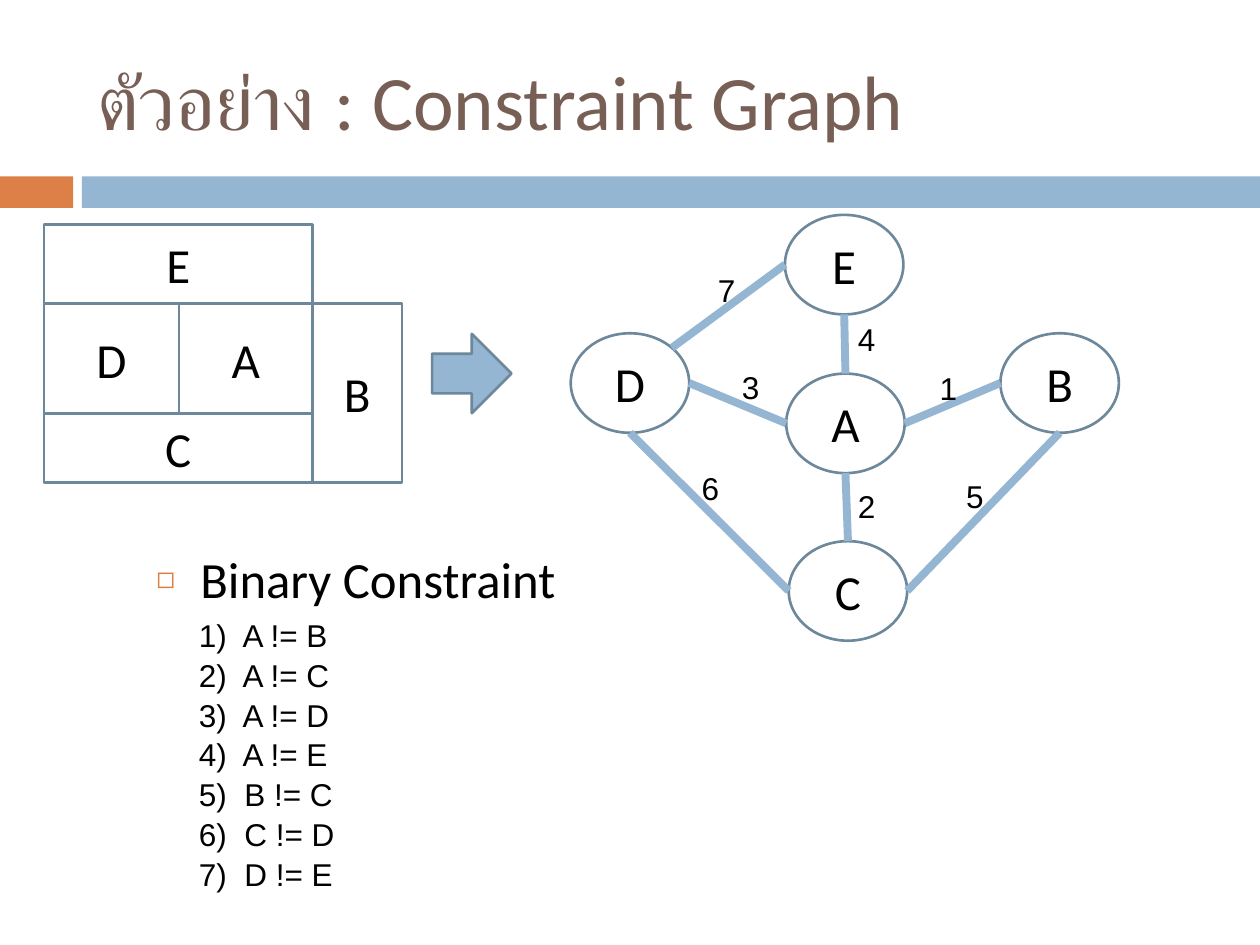
from math import sqrt

from lxml.etree import SubElement
from pptx import Presentation
from pptx.dml.color import RGBColor
from pptx.enum.shapes import MSO_CONNECTOR as LINK, MSO_SHAPE as SHAPE
from pptx.enum.text import MSO_ANCHOR as ANCHOR, MSO_AUTO_SIZE as FIT, PP_ALIGN as ALIGN
from pptx.oxml.ns import qn
from pptx.util import Inches, Pt

BLACK = RGBColor(0x00, 0x00, 0x00)
WHITE = RGBColor(0xFF, 0xFF, 0xFF)
BROWN = RGBColor(0x77, 0x5F, 0x55)
ORANGE = RGBColor(0xDD, 0x80, 0x47)
BLUE = RGBColor(0x94, 0xB6, 0xD2)
SLATE = RGBColor(0x6D, 0x87, 0x9B)

# Map grid lines, and each region as first column, first row, end column, end row
COLS = (0.35, 1.42, 2.48, 3.19)
ROWS = (1.78, 2.41, 3.28, 3.83)
MAP = {"E": (0, 0, 2, 1), "D": (0, 1, 1, 2), "C": (0, 2, 2, 3),
       "B": (2, 1, 3, 3), "A": (1, 1, 2, 2)}

# Graph nodes by centre, with a common size
NODE_W, NODE_H = 0.94, 0.79
NODES = {"A": (6.71, 3.36), "C": (6.73, 4.69), "B": (8.41, 3.04),
         "D": (5.0, 3.04), "E": (6.7, 2.1)}

# Points on an ellipse, in radii from its centre
TOP, BOTTOM, LEFT, RIGHT = (0, -1), (0, 1), (-1, 0), (1, 0)
CORNER = (1 / sqrt(2), -1 / sqrt(2))

# Constraints in order: two nodes, their joining points, place of the number
EDGES = (("A", "B", RIGHT, LEFT, (7.36, 2.88)),
         ("A", "C", BOTTOM, TOP, (6.71, 3.82)),
         ("A", "D", LEFT, RIGHT, (5.79, 2.87)),
         ("A", "E", TOP, BOTTOM, (6.71, 2.49)),
         ("B", "C", BOTTOM, RIGHT, (7.57, 3.74)),
         ("C", "D", LEFT, BOTTOM, (5.47, 3.67)),
         ("D", "E", CORNER, LEFT, (5.6, 2.1)))
LIST_TOP, LIST_STEP = 4.84, 0.316


def place(item, x, y, w, h):
    item.left, item.top, item.width, item.height = map(Inches, (x, y, w, h))


def write(para, text, size, font="Calibri", color=BLACK):
    run = para.add_run()
    run.text = text
    run.font.size, run.font.name = Pt(size), font
    run.font.color.rgb = color


def add_form(slide, kind, box, fill=None, line=None, text=None):
    form = slide.shapes.add_shape(kind, *map(Inches, box))
    form.shadow.inherit = False
    if fill is None:
        form.fill.background()
    else:
        form.fill.solid()
        form.fill.fore_color.rgb = fill
    if line is None:
        form.line.fill.background()
    else:
        form.line.color.rgb, form.line.width = line, Pt(1.5)
    if text:
        frame = form.text_frame
        frame.vertical_anchor = ANCHOR.MIDDLE
        frame.paragraphs[0].alignment = ALIGN.CENTER
        write(frame.paragraphs[0], text, 28)


def add_note(slide, x, y, w, text, wrap):
    frame = slide.shapes.add_textbox(*map(Inches, (x, y, w, 0.4))).text_frame
    frame.word_wrap, frame.auto_size = wrap, FIT.SHAPE_TO_FIT_TEXT
    write(frame.paragraphs[0], text, 18, "Arial")


def port(name, side):
    x, y = NODES[name]
    return Inches(x + side[0] * NODE_W / 2), Inches(y + side[1] * NODE_H / 2)


def add_edge(slide, start, end):
    edge = slide.shapes.add_connector(LINK.STRAIGHT, *start, *end)
    edge.line.color.rgb, edge.line.width = BLUE, Pt(4.5)
    SubElement(edge._element.spPr, qn("a:effectLst"))


def add_bullet(para):
    para.space_before = Pt(7)
    props = para._p.get_or_add_pPr()
    props.set("marL", str(Inches(0.35)))
    props.set("indent", str(-Inches(0.35)))
    tint = SubElement(props, qn("a:buClr"))
    SubElement(tint, qn("a:srgbClr"), val=str(ORANGE))
    SubElement(props, qn("a:buSzPct"), val="60000")
    SubElement(props, qn("a:buChar"), char="◻")


def add_heads(slide):
    title, body = slide.shapes.title, slide.placeholders[1]
    place(title, 0.67, 0.25, 8.92, 1.08)
    place(body, 1.14, 4.3, 3.48, 0.63)
    for item in (title, body):
        item.text_frame.auto_size = FIT.NONE
    title.text_frame.vertical_anchor = ANCHOR.MIDDLE
    para = title.text_frame.paragraphs[0]
    para.alignment = ALIGN.LEFT
    write(para, "ตัวอย่าง : Constraint Graph", 44, color=BROWN)
    para = body.text_frame.paragraphs[0]
    add_bullet(para)
    write(para, "Binary Constraint", 29)


def add_map(slide):
    for name, (c1, r1, c2, r2) in MAP.items():
        box = COLS[c1], ROWS[r1], COLS[c2] - COLS[c1], ROWS[r2] - ROWS[r1]
        add_form(slide, SHAPE.RECTANGLE, box, WHITE, SLATE, name)


def add_graph(slide):
    for name, (x, y) in NODES.items():
        box = x - NODE_W / 2, y - NODE_H / 2, NODE_W, NODE_H
        add_form(slide, SHAPE.OVAL, box, line=SLATE, text=name)
    for one, two, out, into, _ in EDGES:
        add_edge(slide, port(one, out), port(two, into))


def add_rules(slide):
    for i, (one, two, _, _, spot) in enumerate(EDGES):
        add_note(slide, *spot, 0.34, str(i + 1), False)
        add_note(slide, 1.48, LIST_TOP + i * LIST_STEP, 3.15,
                 f"{i + 1})  {one} != {two}", True)


def main():
    deck = Presentation()
    deck.slide_width, deck.slide_height = Inches(10), Inches(7.5)
    slide = deck.slides.add_slide(deck.slide_layouts[1])
    # Header band
    add_form(slide, SHAPE.RECTANGLE, (0, 1.4, 0.58, 0.25), ORANGE)
    add_form(slide, SHAPE.RECTANGLE, (0.65, 1.4, 9.35, 0.25), BLUE)
    add_heads(slide)
    # Map, arrow, graph and numbered constraints
    add_map(slide)
    add_form(slide, SHAPE.RIGHT_ARROW, (3.43, 2.65, 0.63, 0.63), BLUE, SLATE)
    add_graph(slide)
    add_rules(slide)
    deck.save("out.pptx")


if __name__ == "__main__":
    main()
